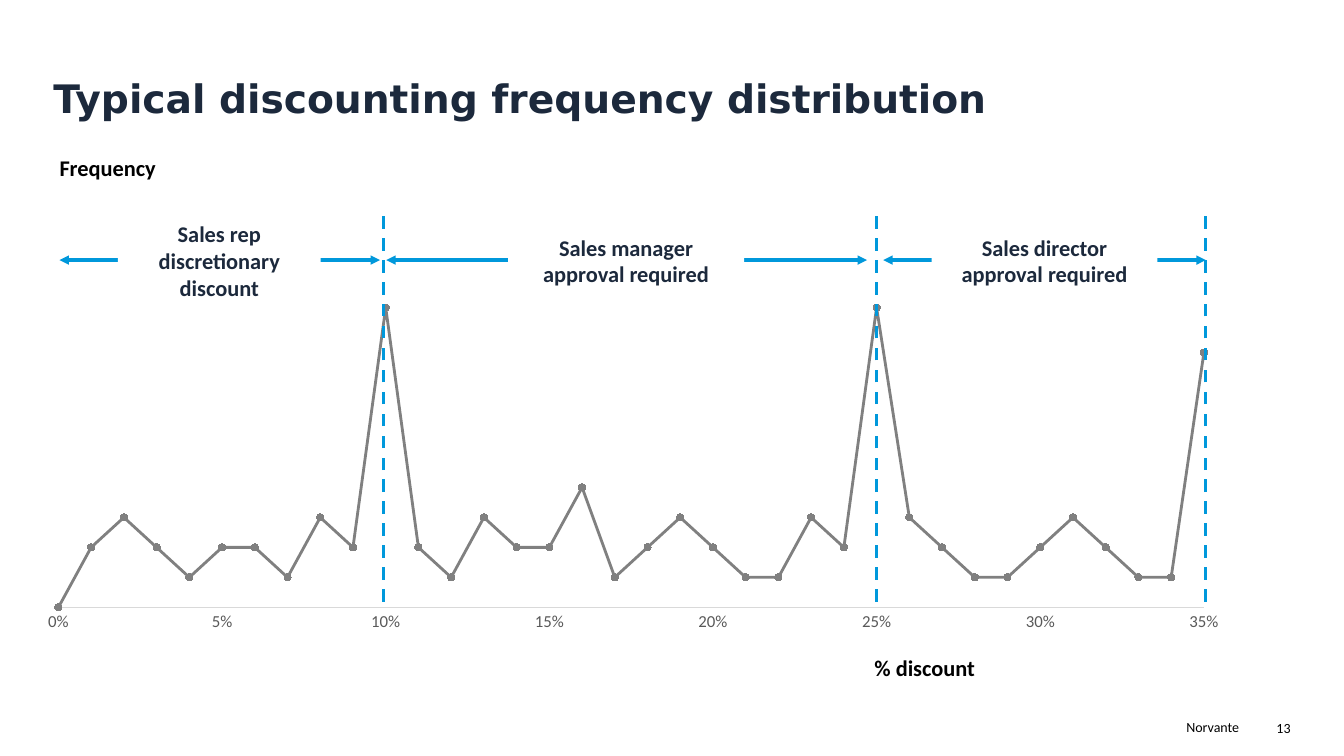
import pptx
import pptx.chart.data
import pptx.dml.color
import pptx.enum.chart
import pptx.enum.dml
import pptx.enum.shapes
import pptx.enum.text
import pptx.oxml.ns
import pptx.oxml.xmlchemy
import pptx.util
from dataclasses import dataclass

# Content
TITLE = "Typical discounting frequency distribution"
FREQUENCIES = [
    0, 20, 30, 20, 10, 20, 20, 10, 30, 20, 100, 20,
    10, 30, 20, 20, 40, 10, 20, 30, 20, 10, 10, 30,
    20, 100, 30, 20, 10, 10, 20, 30, 20, 10, 10, 85,
]
# Approval bands: label, arrow start, arrow end, label width, divider position
BANDS = [
    ("Sales rep discretionary discount", 59, 377, 201, 380),
    ("Sales manager approval required", 383, 860, 234, 869),
    ("Sales director approval required", 876, 1196, 224, 1196),
]

# Geometry in px, 100 to the inch
PX = 9144
BAND_TOP, BAND_HEIGHT, DIVIDER_BOTTOM = 214, 89, 597
PLOT_AREA = {"x": 0.02, "y": 0.05, "w": 0.95, "h": 0.86}


@dataclass(frozen=True)
class Theme:
    navy: str = "1C293C"
    blue: str = "0098DB"
    grey: str = "808080"
    axis: str = "D9D9D9"
    tick: str = "595959"
    black: str = "000000"
    white: str = "FFFFFF"
    body_font: str = "Calibri"
    title_font: str = "DejaVu Sans"
    title_size: int = 28
    label_size: int = 16
    tick_size: int = 12
    footer_size: int = 10


THEME = Theme()
ALIGN = pptx.enum.text.PP_ALIGN
ANCHOR = pptx.enum.text.MSO_ANCHOR


def rgb(color):
    return pptx.dml.color.RGBColor.from_string(color)


def px(*lengths):
    return [pptx.util.Emu(length * PX) for length in lengths]


def new_element(tag):
    return pptx.oxml.xmlchemy.OxmlElement(tag)


def style_font(font, size, color, name=THEME.body_font, bold=False):
    font.size = pptx.util.Pt(size)
    font.color.rgb = rgb(color)
    font.name = name
    font.bold = bold


def fill_text(shape, text, size, color, align=ALIGN.LEFT, anchor=ANCHOR.TOP,
              insets=(8, 4, 8, 4), name=THEME.body_font, bold=True):
    frame = shape.text_frame
    frame.word_wrap = True
    frame.vertical_anchor = anchor
    (frame.margin_left, frame.margin_top,
     frame.margin_right, frame.margin_bottom) = px(*insets)
    paragraph = frame.paragraphs[0]
    paragraph.alignment = align
    run = paragraph.add_run()
    run.text = text
    style_font(run.font, size, color, name, bold)
    return paragraph


def add_text(slide, box, text, size, color, **options):
    return fill_text(slide.shapes.add_textbox(*px(*box)), text, size, color, **options)


def add_line(slide, start, end, dashed=False, arrows=False):
    connector = slide.shapes.add_connector(
        pptx.enum.shapes.MSO_CONNECTOR.STRAIGHT, *px(*start, *end))
    connector.line.color.rgb = rgb(THEME.blue)
    connector.line.width = pptx.util.Pt(2.25)
    if dashed:
        connector.line.dash_style = pptx.enum.dml.MSO_LINE.DASH
    if arrows:
        outline = connector.line._get_or_add_ln()
        for tag in ("a:headEnd", "a:tailEnd"):
            arrowhead = new_element(tag)
            arrowhead.set("type", "triangle")
            outline.append(arrowhead)
    connector._element.spPr.append(new_element("a:effectLst"))


def add_band(slide, label, start, end, width, divider):
    middle = BAND_TOP + BAND_HEIGHT // 2
    add_line(slide, (divider, DIVIDER_BOTTOM), (divider, BAND_TOP), dashed=True)
    add_line(slide, (start, middle), (end, middle), arrows=True)
    left = (start + end - width) // 2
    shape = slide.shapes.add_shape(
        pptx.enum.shapes.MSO_SHAPE.RECTANGLE, *px(left, BAND_TOP, width, BAND_HEIGHT))
    shape.shadow.inherit = False
    shape.fill.solid()
    shape.fill.fore_color.rgb = rgb(THEME.white)
    shape.line.fill.background()
    fill_text(shape, label, THEME.label_size, THEME.navy,
              align=ALIGN.CENTER, anchor=ANCHOR.MIDDLE)


def set_plot_area(chart):
    plot_area = chart._chartSpace.chart.plotArea
    for old in plot_area.findall(pptx.oxml.ns.qn("c:layout")):
        plot_area.remove(old)
    layout = new_element("c:layout")
    manual = new_element("c:manualLayout")
    layout.append(manual)
    settings = {"layoutTarget": "inner", "xMode": "edge", "yMode": "edge", **PLOT_AREA}
    for tag, value in settings.items():
        setting = new_element(f"c:{tag}")
        setting.set("val", str(value))
        manual.append(setting)
    plot_area.insert(0, layout)


def add_frequency_chart(slide):
    data = pptx.chart.data.XyChartData()
    points = data.add_series("Frequency")
    for percent, frequency in enumerate(FREQUENCIES):
        points.add_data_point(percent / 100, frequency)
    chart = slide.shapes.add_chart(
        pptx.enum.chart.XL_CHART_TYPE.XY_SCATTER_LINES,
        *px(34, 225, 1196, 415), data).chart
    chart.has_title = False
    chart.has_legend = False
    style_font(chart.font, THEME.footer_size, THEME.black)
    chart.plots[0].vary_by_categories = False
    set_plot_area(chart)

    # Axes
    discount_axis, frequency_axis = chart.category_axis, chart.value_axis
    for axis, maximum, step in ((discount_axis, 0.35, 0.05), (frequency_axis, 120, 20)):
        axis.minimum_scale = 0
        axis.maximum_scale = maximum
        axis.major_unit = step
        axis.has_major_gridlines = False
        axis.major_tick_mark = pptx.enum.chart.XL_TICK_MARK.NONE
        axis.minor_tick_mark = pptx.enum.chart.XL_TICK_MARK.NONE
    frequency_axis.visible = False
    discount_axis.format.line.color.rgb = rgb(THEME.axis)
    discount_axis.format.line.width = pptx.util.Pt(0.75)
    discount_axis.tick_labels.number_format = "0%"
    discount_axis.tick_labels.number_format_is_linked = False
    style_font(discount_axis.tick_labels.font, THEME.tick_size, THEME.tick)

    # Series
    series = chart.plots[0].series[0]
    series.smooth = False
    series.format.line.color.rgb = rgb(THEME.grey)
    series.format.line.width = pptx.util.Pt(2)
    series.marker.style = pptx.enum.chart.XL_MARKER_STYLE.CIRCLE
    series.marker.size = 5
    series.marker.format.fill.solid()
    series.marker.format.fill.fore_color.rgb = rgb(THEME.grey)
    series.marker.format.line.fill.background()


def main():
    presentation = pptx.Presentation()
    presentation.slide_width, presentation.slide_height = px(1333, 750)
    slide = presentation.slides.add_slide(presentation.slide_layouts[6])

    # Title
    title = add_text(slide, (53, 51, 1227, 75), TITLE, THEME.title_size, THEME.navy,
                     anchor=ANCHOR.BOTTOM, insets=(0, 5, 0, 5), name=THEME.title_font)
    title.line_spacing = 0.9

    # Chart and approval bands
    add_frequency_chart(slide)
    for band in BANDS:
        add_band(slide, *band)

    # Axis titles
    add_text(slide, (59, 149, 295, 35), "Frequency", THEME.label_size, THEME.black,
             insets=(0, 4, 8, 4))
    add_text(slide, (680, 645, 295, 35), "% discount", THEME.label_size, THEME.black,
             align=ALIGN.RIGHT)

    # Footer
    for text, box in (("Norvante", (921, 708, 308, 27)), ("13", (1185, 709, 95, 27))):
        add_text(slide, box, text, THEME.footer_size, THEME.black,
                 align=ALIGN.RIGHT, insets=(0, 5, 0, 5), bold=False)

    presentation.save("out.pptx")


if __name__ == "__main__":
    main()
